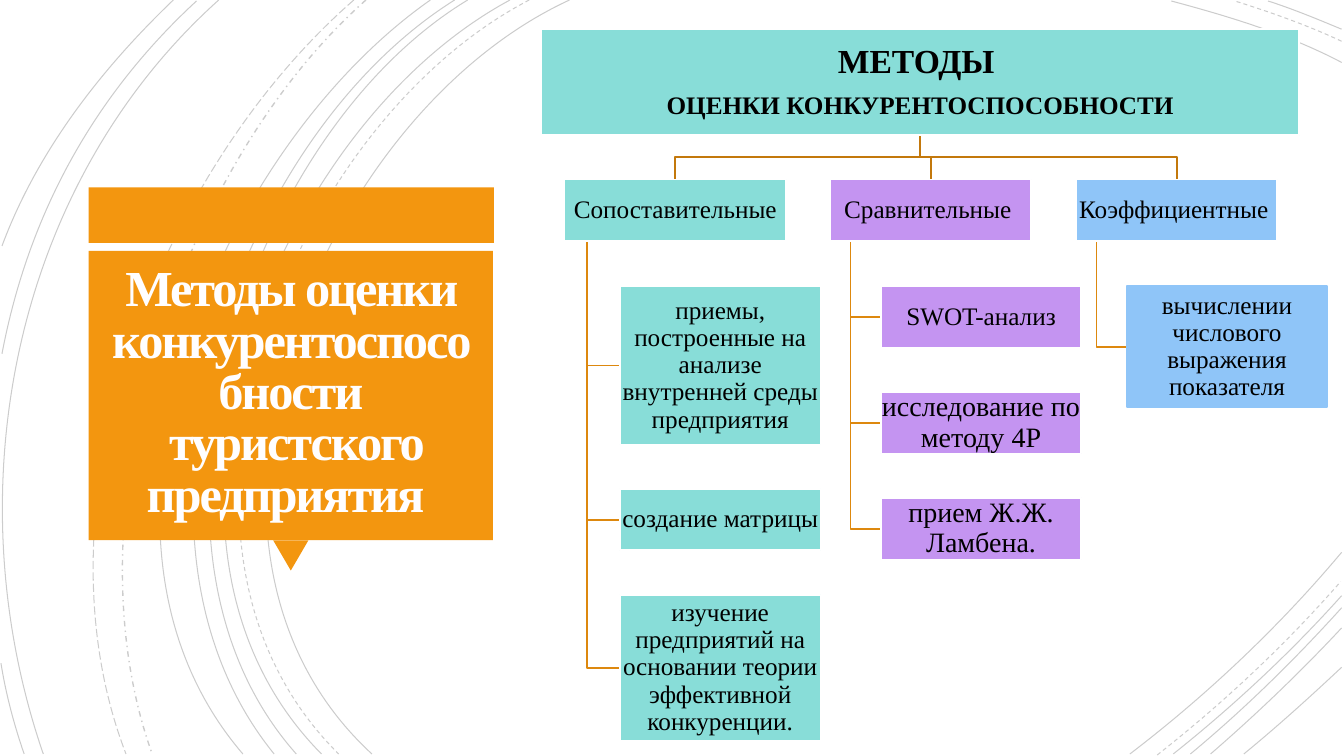
import pptx
import pptx.util
import pptx.dml.color
import pptx.enum.dml
import pptx.enum.shapes
import pptx.enum.text
import pptx.oxml.ns
import lxml.etree

RGB = pptx.dml.color.RGBColor
KIND = pptx.enum.shapes.MSO_SHAPE
DASH = pptx.enum.dml.MSO_LINE

ORANGE = RGB(0xF3, 0x96, 0x0F)
STEM = RGB(0xC3, 0x78, 0x0C)
TWIG = RGB(0xDD, 0x88, 0x0E)
TEAL = RGB(0x88, 0xDD, 0xD8)
LILAC = RGB(0xC4, 0x94, 0xF1)
BLUE = RGB(0x8F, 0xC5, 0xF8)
BLACK = RGB(0, 0, 0)
WHITE = RGB(0xFF, 0xFF, 0xFF)
CREAM = RGB(0xFF, 0xFE, 0xFF)

ARCS = {
    DASH.SOLID: [
        (56.5, 0, 31.5, 11.5, 14.3, 54, 36.9, 74.8),
        (133.1, 6.2, 127.8, 3.4, 121.8, 1.6, 116.2, 0.1),
        (112.1, 74.8, 119.7, 69, 126.9, 62.2, 133.1, 54.8),
        (50.6, 0, 27, 12.7, 11, 53.7, 31.9, 74.8),
        (133.1, 2.9, 130.7, 1.9, 128.3, 0.9, 125.8, 0.1),
        (116.4, 74.8, 122.3, 70.1, 128, 64.8, 133.1, 59.1),
        (46.4, 0, 24.4, 13.3, 11, 54.1, 29.4, 74.8),
        (118.1, 74.8, 123.4, 70.4, 128.4, 65.5, 133.1, 60.3),
        (45.1, 0, 23.1, 13.8, 9.7, 53.3, 27.2, 74.8),
        (120.1, 74.8, 124.6, 70.9, 129, 66.7, 133.1, 62.3),
        (42.7, 0, 21.7, 14.7, 5.3, 52.9, 24.1, 74.8),
        (123.4, 74.8, 126.7, 72.1, 129.9, 69.2, 133.1, 66.2),
        (21.7, 0, 1.1, 18.5, -4.6, 49, 4.3, 74.8),
        (19.5, 0.1, 9.2, 9.6, 2.8, 21.4, 0.2, 35.1),
        (0.1, 65.8, 0.6, 68.9, 1.4, 71.9, 2.4, 74.8),
        (17.2, 0, 10, 6.9, 3.7, 15, 0.2, 24.4),
    ],
    DASH.DASH: [
        (52.5, 0, 28.5, 12.5, 12.3, 53.7, 33.6, 74.8),
        (133.1, 4.1, 129.7, 2.5, 126, 1.2, 122.5, 0.1),
        (114.8, 74.9, 121.3, 69.8, 127.5, 64, 133, 57.7),
    ],
    DASH.DASH_DOT: [(36.3, 0, 17.6, 16.6, 6.5, 50.9, 15.1, 74.8)],
    DASH.LONG_DASH: [(35.1, 0, 15.7, 16.9, 2.9, 49.9, 12.5, 74.8)],
}

HIGH, GAP, TOP, LEAF = 6.1, 4.4, 17.8, 28.4
WIDE = 19.9
HEAD = (53.7, 2.9, 75.2, 10.5)
TREE = [
    (56, 22, TEAL, "Сопоставительные", [
        ("приемы, построенные на анализе внутренней среды предприятия", 15.7, 18),
        ("создание матрицы", HIGH, 18),
        ("изучение предприятий на основании теории эффективной конкуренции.", 14.5, 18)]),
    (82.4, WIDE, LILAC, "Сравнительные ", [
        ("SWOT-анализ", HIGH, 18),
        ("исследование по методу 4Р", HIGH, 20),
        ("прием Ж.Ж. Ламбена.", HIGH, 20)]),
    (106.8, WIDE, BLUE, "Коэффициентные ", [
        ("вычислении числового выражения показателя", 12, 18)]),
]


def cell(num):
    return pptx.util.Inches(num / 10)


def write(frame, text, size=18, bold=False, color=BLACK, lead=0.9,
          after=0, pad=0.1, track=0, more=False):
    frame.word_wrap = True
    frame.auto_size = pptx.enum.text.MSO_AUTO_SIZE.NONE
    frame.vertical_anchor = pptx.enum.text.MSO_ANCHOR.MIDDLE
    frame.margin_left = frame.margin_right = cell(pad)
    frame.margin_top = frame.margin_bottom = cell(pad)
    para = frame.add_paragraph() if more else frame.paragraphs[0]
    para.text = text
    para.alignment = pptx.enum.text.PP_ALIGN.CENTER
    para.line_spacing = lead
    para.space_after = pptx.util.Pt(after)
    for run in para.runs:
        run.font.name = "Times New Roman"
        run.font.size = pptx.util.Pt(size)
        run.font.bold = bold
        run.font.color.rgb = color
        if track:
            run.font._element.set("spc", str(int(track * 100)))


class Board:
    def __init__(self, deck):
        self.slide = deck.slides.add_slide(deck.slide_layouts[5])
        self.shapes = self.slide.shapes

    def block(self, x, y, w, h, fill, edge=None, kind=KIND.RECTANGLE):
        shape = self.shapes.add_shape(kind, *map(cell, (x, y, w, h)))
        shape.shadow.inherit = False
        shape.fill.solid()
        shape.fill.fore_color.rgb = fill
        if edge is None:
            shape.line.fill.background()
        else:
            shape.line.color.rgb = edge
            shape.line.width = pptx.util.Pt(1.25)
        return shape

    def trace(self, spots, color, width=1.25):
        spots = [(cell(x), cell(y)) for x, y in spots]
        pen = self.shapes.build_freeform(*spots[0])
        pen.add_line_segments(spots[1:], close=False)
        shape = pen.convert_to_shape()
        shape.shadow.inherit = False
        shape.fill.background()
        shape.line.color.rgb = color
        shape.line.width = pptx.util.Pt(width)
        return shape

    def curve(self, arc, dash, width, alpha=20):
        qn = pptx.oxml.ns.qn
        shape = self.trace(list(zip(arc[::2], arc[1::2])), BLACK, width)
        shape.line.dash_style = dash
        tint = shape.line._ln.find(".//" + qn("a:srgbClr"))
        lxml.etree.SubElement(tint, qn("a:alpha"), val=str(alpha * 1000))
        route = shape.element.find(".//" + qn("a:path"))
        bow = lxml.etree.SubElement(route, qn("a:cubicBezTo"))
        for line in route.findall(qn("a:lnTo")):
            bow.append(line[0])
            route.remove(line)

    def title(self, x, y, w, h, text, **form):
        title = self.shapes.title
        title.left, title.top, title.width, title.height = map(cell, (x, y, w, h))
        write(title.text_frame, text, **form)
        title.element.getparent().append(title.element)

    def branch(self, x, wide, fill, name, leaves):
        left, top, width, high = HEAD
        root, mid, base = left + width / 2, x + wide / 2, top + high
        turn = (base + TOP) / 2
        self.trace([(root, base), (root, turn), (mid, turn), (mid, TOP)], STEM)
        trunk, inset, y = x + wide * 0.1, x + wide * 0.25, LEAF
        for text, tall, size in leaves:
            half = y + tall / 2
            self.trace([(trunk, TOP + HIGH), (trunk, half), (inset, half)], TWIG)
            leaf = self.block(inset, y, WIDE, tall, fill,
                              BLUE if fill == BLUE else WHITE)
            write(leaf.text_frame, text, size=size)
            y += tall + GAP
        label = self.block(x, TOP, wide, HIGH, fill, WHITE)
        write(label.text_frame, name)


def main():
    deck = pptx.Presentation()
    deck.slide_width, deck.slide_height = cell(133.33), cell(75)
    board = Board(deck)
    for dash, arcs in ARCS.items():
        for arc in arcs:
            board.curve(arc, dash, 1 if dash == DASH.DASH_DOT else 0.75)
    board.block(8.8, 18.6, 40.2, 5.5, ORANGE)
    board.block(27.1, 53.6, 3.5, 3, ORANGE,
                kind=KIND.ISOSCELES_TRIANGLE).rotation = 180
    board.block(8.8, 24.9, 40.1, 28.7, ORANGE)
    board.title(9.7, 25.6, 38.3, 27,
                "Методы оценки конкурентоспособности\v туристского предприятия ",
                size=36, bold=True, color=CREAM, lead=0.85, pad=1, track=-1.5)
    for branch in TREE:
        board.branch(*branch)
    head = board.block(*HEAD, TEAL, WHITE).text_frame
    write(head, "МЕТОДЫ ", size=24, bold=True, after=8.4, pad=0.2)
    write(head, "ОЦЕНКИ КОНКУРЕНТОСПОСОБНОСТИ", bold=True, pad=0.2, more=True)
    deck.save("out.pptx")


if __name__ == "__main__":
    main()
